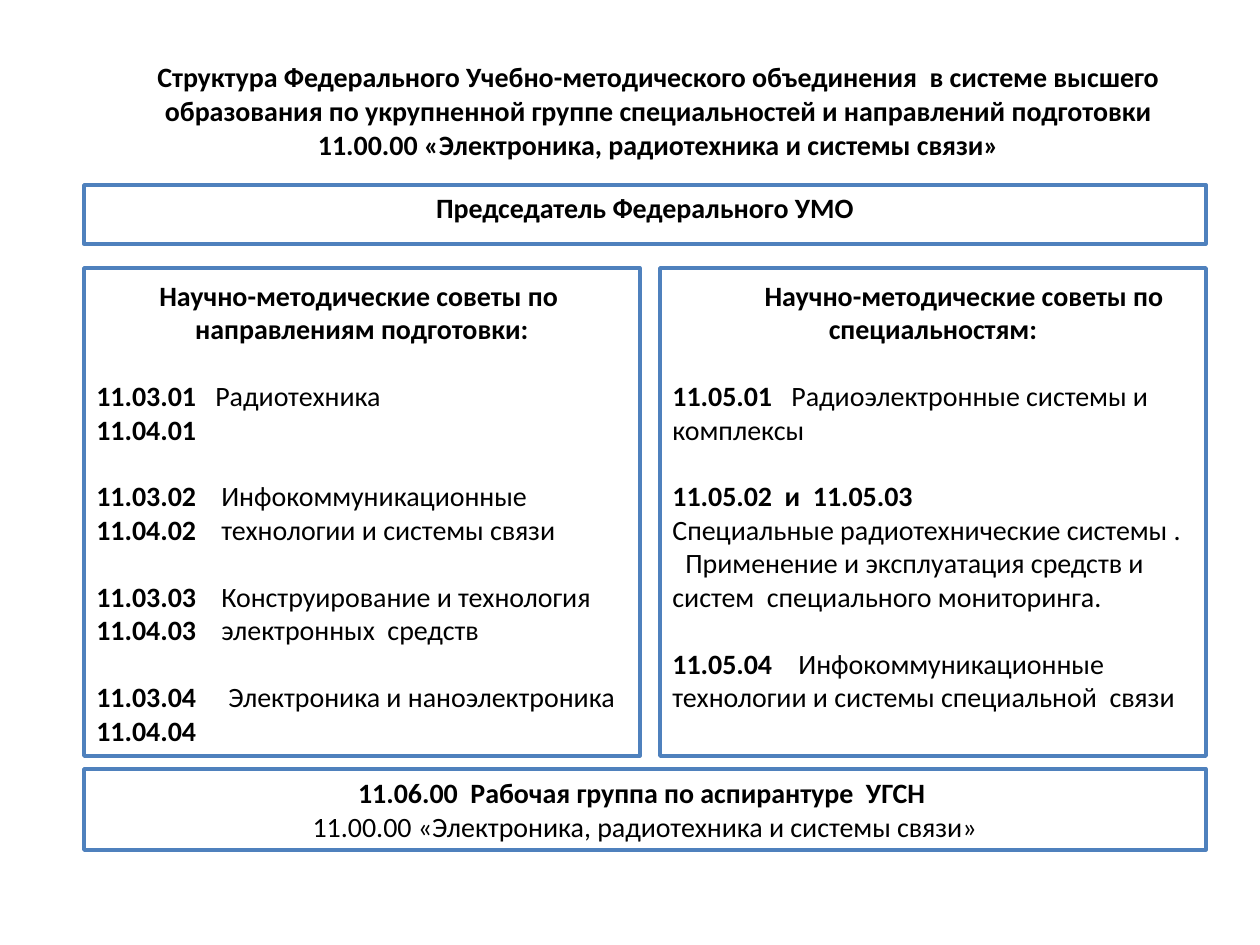
from lxml import etree
from pptx import Presentation
from pptx.dml.color import RGBColor
from pptx.enum.shapes import MSO_SHAPE
from pptx.enum.text import MSO_ANCHOR, MSO_AUTO_SIZE, PP_ALIGN
from pptx.oxml.ns import qn
from pptx.util import Emu, Pt

RECT = MSO_SHAPE.RECTANGLE
TOP, MID = MSO_ANCHOR.TOP, MSO_ANCHOR.MIDDLE
LEFT, MIDDLE = PP_ALIGN.LEFT, PP_ALIGN.CENTER
FIXED = MSO_AUTO_SIZE.NONE
SCALE = 914400 / 126
SIZE = 16
GAP = 19

TITLE = [
    "Структура Федерального Учебно-методического объединения  в системе высшего "
    "образования по укрупненной группе специальностей и направлений подготовки",
    "11.00.00 «Электроника, радиотехника и системы связи»",
]
FIELDS = [
    ("11.03.01", "Радиотехника", "11.04.01", "", 119),
    ("11.03.02", "Инфокоммуникационные", "11.04.02", "технологии и системы связи", 125),
    ("11.03.03", "Конструирование и технология", "11.04.03", "электронных  средств", 125),
    ("11.03.04", "Электроника и наноэлектроника", "11.04.04", "", 132),
]


def px(count):
    return Emu(round(count * SCALE))


def color(code):
    return RGBColor.from_string(code)


def add_text(frame, code="", name="", align=LEFT, gap=0, tab=0, indent=0):
    first = frame.paragraphs[0]
    para = frame.add_paragraph() if first.runs else first
    para.alignment = align
    para.space_before = Pt(gap)
    props = para._p.get_or_add_pPr()
    if indent:
        props.set("indent", str(px(indent)))
    if tab:
        stops = etree.SubElement(props, qn("a:tabLst"))
        etree.SubElement(stops, qn("a:tab"), pos=str(px(tab)), algn="l")
    label = code + "\t" if tab and name else code
    for words, bold in ((label, True), (name, False)):
        if words:
            run = para.add_run()
            run.text = words
            font = run.font
            font.name, font.size, font.bold = "Calibri", Pt(SIZE), bold
            font.color.rgb = color("000000")


def place(shape, x, y, w, h):
    shape.left, shape.top, shape.width, shape.height = map(px, (x, y, w, h))


def set_frame(shape, anchor, inset=6):
    frame = shape.text_frame
    frame.auto_size = FIXED
    frame.word_wrap = True
    frame.vertical_anchor = anchor
    frame.margin_top = px(inset)
    return frame


def set_box(shape):
    shape.fill.solid()
    shape.fill.fore_color.rgb = color("FFFFFF")
    shape.line.color.rgb = color("4F81BD")
    shape.line.width = Pt(2)


def add_box(slide, x, y, w, h, anchor=TOP, inset=10):
    shape = slide.shapes.add_shape(RECT, px(x), px(y), px(w), px(h))
    shape.shadow.inherit = False
    set_box(shape)
    return set_frame(shape, anchor, inset)


def add_head(slide):
    title = slide.shapes.title
    place(title, 123, 36, 1071, 149)
    frame = set_frame(title, MID)
    for line in TITLE:
        add_text(frame, line, align=MIDDLE)
    chair = slide.placeholders[1]
    place(chair, 84, 185, 1122, 59)
    set_box(chair)
    add_text(set_frame(chair, TOP), "Председатель Федерального УМО", align=MIDDLE, gap=3)


def add_fields(slide):
    frame = add_box(slide, 84, 268, 556, 488)
    add_text(frame, "Научно-методические советы по ", align=MIDDLE)
    add_text(frame, "направлениям подготовки:", align=MIDDLE)
    for code, name, other, rest, tab in FIELDS:
        add_text(frame, code, name, gap=GAP, tab=tab)
        add_text(frame, other, rest, tab=tab)


def add_majors(slide):
    frame = add_box(slide, 660, 268, 546, 488)
    add_text(frame, "Научно-методические советы по специальностям:",
             align=MIDDLE, indent=62)
    add_text(frame, "11.05.01", "Радиоэлектронные системы и комплексы", gap=GAP, tab=119)
    add_text(frame, "11.05.02  и  11.05.03", gap=GAP)
    add_text(frame, name="Специальные радиотехнические системы .")
    add_text(frame, name="Применение и эксплуатация средств и систем  специального мониторинга.",
             indent=13)
    add_text(frame, "11.05.04", "Инфокоммуникационные технологии и системы специальной  связи",
             gap=GAP, tab=126)


def add_group(slide):
    frame = add_box(slide, 84, 769, 1122, 81, anchor=MID, inset=6)
    add_text(frame, "11.06.00  Рабочая группа по аспирантуре  УГСН ", align=MIDDLE)
    add_text(frame, name=TITLE[1], align=MIDDLE)


def main():
    deck = Presentation()
    deck.slide_width, deck.slide_height = px(1260), px(945)
    slide = deck.slides.add_slide(deck.slide_layouts[0])
    add_head(slide)
    add_majors(slide)
    add_group(slide)
    add_fields(slide)
    deck.save("out.pptx")


if __name__ == "__main__":
    main()
